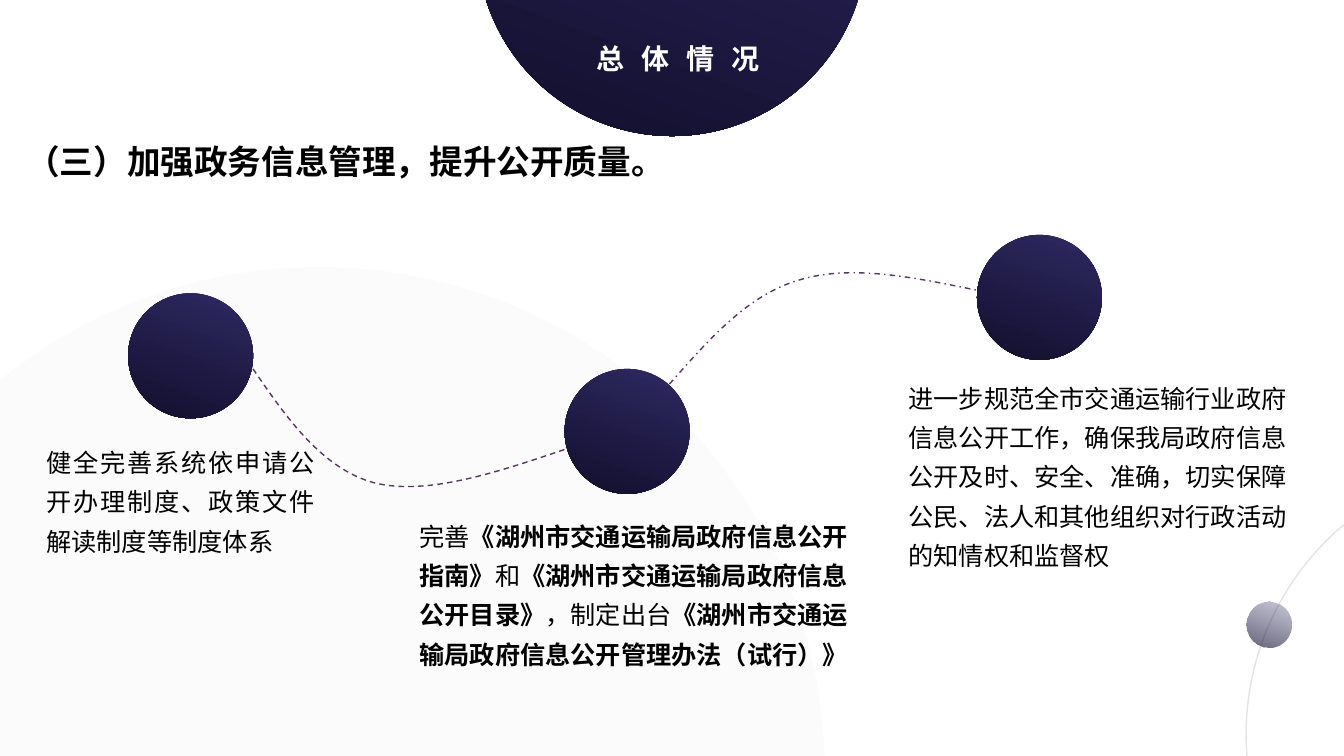
import dataclasses
import typing

import lxml.etree
import pptx
import pptx.dml.color
import pptx.enum.dml
import pptx.enum.shapes
import pptx.enum.text
import pptx.oxml.ns
import pptx.util

ALIGN = pptx.enum.text.PP_ALIGN
DASH = pptx.enum.dml.MSO_LINE
WIDTH = pptx.util.Inches(13.33)
HEIGHT = pptx.util.Inches(7.5)
qn = pptx.oxml.ns.qn


@dataclasses.dataclass(frozen=True)
class Theme:
    font: str = "Noto Sans CJK SC"
    black: str = "000000"
    white: str = "FFFFFF"
    navy: tuple[str, str] = ("2E2961", "120F2D")
    curve: str = "563862"
    ring: str = "A6A6A6"
    pale: str = "F2F2F2"
    heading: int = 24
    badge: int = 20
    body: int = 18
    line: int = 1


THEME = Theme()


@dataclasses.dataclass(frozen=True)
class Circle:
    left: float
    top: float
    size: float
    colors: tuple[str, ...] = THEME.navy
    opacity: tuple[int, ...] = (100, 100)
    outlined: bool = False


@dataclasses.dataclass(frozen=True)
class Curve:
    points: tuple[tuple[float, float], ...]
    dash: typing.Any


@dataclasses.dataclass(frozen=True)
class Passage:
    box: tuple[float, float, float, float]
    runs: tuple[tuple[str, bool], ...]
    align: typing.Any = ALIGN.LEFT


BACKDROP = (
    Circle(35.48, -33.6, 29.03),
    Circle(92.72, 60.93, 40.74, (THEME.ring,), (30,), True),
    Circle(92.72, 79.6, 3.4, THEME.navy, (26, 65)),
    Circle(-13.88, 35.33, 75.24, (THEME.pale,), (29,)),
)
MILESTONES = tuple(
    Circle(left, top, 9.3)
    for left, top in ((9.53, 38.8), (42.01, 48.8), (72.69, 31.07))
)
CURVES = (
    Curve(((18.83, 48.8), (21.38, 55.47), (24.01, 62), (27.83, 63.87),
           (31.73, 65.6), (36.91, 62.53), (42.01, 59.47)), DASH.DASH),
    Curve(((49.81, 50.8), (52.74, 44.93), (55.59, 39.07), (59.41, 37.07),
           (63.24, 34.93), (67.97, 36.67), (72.69, 38.4)), DASH.DASH_DOT),
)
BADGE = Passage((34.06, 5.47, 32.78, 6.8), (("总体情况", True),), ALIGN.CENTER)
HEADING = Passage((1.2, 18, 52.81, 6.67), (("（三）加强政务信息管理，提升公开质量。", True),))
PASSAGES = (
    Passage((2.7, 57.33, 21.46, 17.07),
            (("健全完善系统依申请公开办理制度、政策文件解读制度等制度体系", False),),
            ALIGN.JUSTIFY),
    Passage((30.46, 67.07, 34.06, 22.27),
            (("完善", False), ("《湖州市交通运输局政府信息公开指南》", True),
             ("和", False), ("《湖州市交通运输局政府信息公开目录》", True),
             ("，制定出台", False),
             ("《湖州市交通运输局政府信息公开管理办法（试行）》", True))),
    Passage((66.84, 48.8, 30.01, 27.6),
            (("进一步规范全市交通运输行业政府信息公开工作，确保我局政府信息公开及时、安全、准确，"
              "切实保障公民、法人和其他组织对行政活动的知情权和监督权", False),)),
)


def across(share: float) -> int:
    return round(WIDTH * share / 100)


def down(share: float) -> int:
    return round(HEIGHT * share / 100)


def rgb(value: str) -> pptx.dml.color.RGBColor:
    return pptx.dml.color.RGBColor.from_string(value)


def set_opacity(parent, levels: tuple[int, ...]) -> None:
    for color, level in zip(parent.iter(qn("a:srgbClr")), levels):
        if level < 100:
            lxml.etree.SubElement(color, qn("a:alpha"), val=str(level * 1000))


def draw_circle(s, circle: Circle) -> None:
    size = across(circle.size)
    sp = s.shapes.add_shape(pptx.enum.shapes.MSO_SHAPE.OVAL,
                            across(circle.left), down(circle.top), size, size)
    sp.shadow.inherit = False
    if circle.outlined:
        sp.fill.background()
        sp.line.color.rgb = rgb(circle.colors[0])
        sp.line.width = pptx.util.Pt(THEME.line)
    else:
        sp.line.fill.background()
        if len(circle.colors) == 1:
            sp.fill.solid()
            sp.fill.fore_color.rgb = rgb(circle.colors[0])
        else:
            sp.fill.gradient()
            sp.fill.gradient_angle = 250
            for stop, color in zip(sp.fill.gradient_stops, circle.colors):
                stop.color.rgb = rgb(color)
    set_opacity(sp._element.spPr, circle.opacity)


def draw_curve(s, curve: Curve) -> None:
    start, *rest = [(across(x), down(y)) for x, y in curve.points]
    builder = s.shapes.build_freeform(*start)
    builder.add_line_segments(rest, close=False)
    sp = builder.convert_to_shape()
    sp.shadow.inherit = False
    sp.fill.background()
    sp.line.color.rgb = rgb(THEME.curve)
    sp.line.width = pptx.util.Pt(THEME.line)
    sp.line.dash_style = curve.dash
    outline = next(sp._element.iter(qn("a:path")))
    segments = outline.findall(qn("a:lnTo"))
    for i in range(0, len(segments), 3):
        bezier = lxml.etree.SubElement(outline, qn("a:cubicBezTo"))
        for segment in segments[i:i + 3]:
            bezier.append(segment[0])
            outline.remove(segment)


def write(sp, passage: Passage, *, size: int, color: str = THEME.black,
          spacing: float = 1.0, tracking: int = 0, inset: bool = True,
          wrap: bool = True) -> None:
    left, top, width, height = passage.box
    sp.left, sp.top = across(left), down(top)
    sp.width, sp.height = across(width), down(height)
    tf = sp.text_frame
    tf.word_wrap = wrap
    tf.auto_size = pptx.enum.text.MSO_AUTO_SIZE.NONE
    tf.vertical_anchor = pptx.enum.text.MSO_ANCHOR.TOP
    if not inset:
        tf.margin_left = tf.margin_top = tf.margin_right = tf.margin_bottom = 0
    p = tf.paragraphs[0]
    p.alignment = passage.align
    p.line_spacing = spacing
    p.space_before = p.space_after = pptx.util.Pt(0)
    pPr = p._p.get_or_add_pPr()
    pPr.set("marL", "0")
    pPr.set("indent", "0")
    lxml.etree.SubElement(pPr, qn("a:buNone"))
    for text, bold in passage.runs:
        r = p.add_run()
        r.text = text
        r.font.size = pptx.util.Pt(size)
        r.font.bold = bold
        r.font.color.rgb = rgb(color)
        r.font.name = THEME.font
        rPr = r._r.get_or_add_rPr()
        lxml.etree.SubElement(rPr, qn("a:ea"), typeface=THEME.font)
        if tracking:
            rPr.set("spc", str(tracking * 100))


def main() -> None:
    prs = pptx.Presentation()
    prs.slide_width, prs.slide_height = WIDTH, HEIGHT
    s = prs.slides.add_slide(prs.slide_layouts.get_by_name("Comparison"))
    title, *bodies = list(s.placeholders)
    for circle in BACKDROP:
        draw_circle(s, circle)
    for curve in CURVES:
        draw_curve(s, curve)
    for circle in MILESTONES:
        draw_circle(s, circle)
    write(s.shapes.add_textbox(0, 0, 0, 0), BADGE, size=THEME.badge,
          color=THEME.white, tracking=12, inset=False, wrap=False)
    write(title, HEADING, size=THEME.heading)
    for body, passage in zip(bodies, PASSAGES):
        write(body, passage, size=THEME.body, spacing=1.3)
    for sp in (title, *bodies[:len(PASSAGES)]):
        s.shapes._spTree.append(sp._element)
    for sp in bodies[len(PASSAGES):]:
        s.shapes._spTree.remove(sp._element)
    prs.save("out.pptx")


if __name__ == "__main__":
    main()
